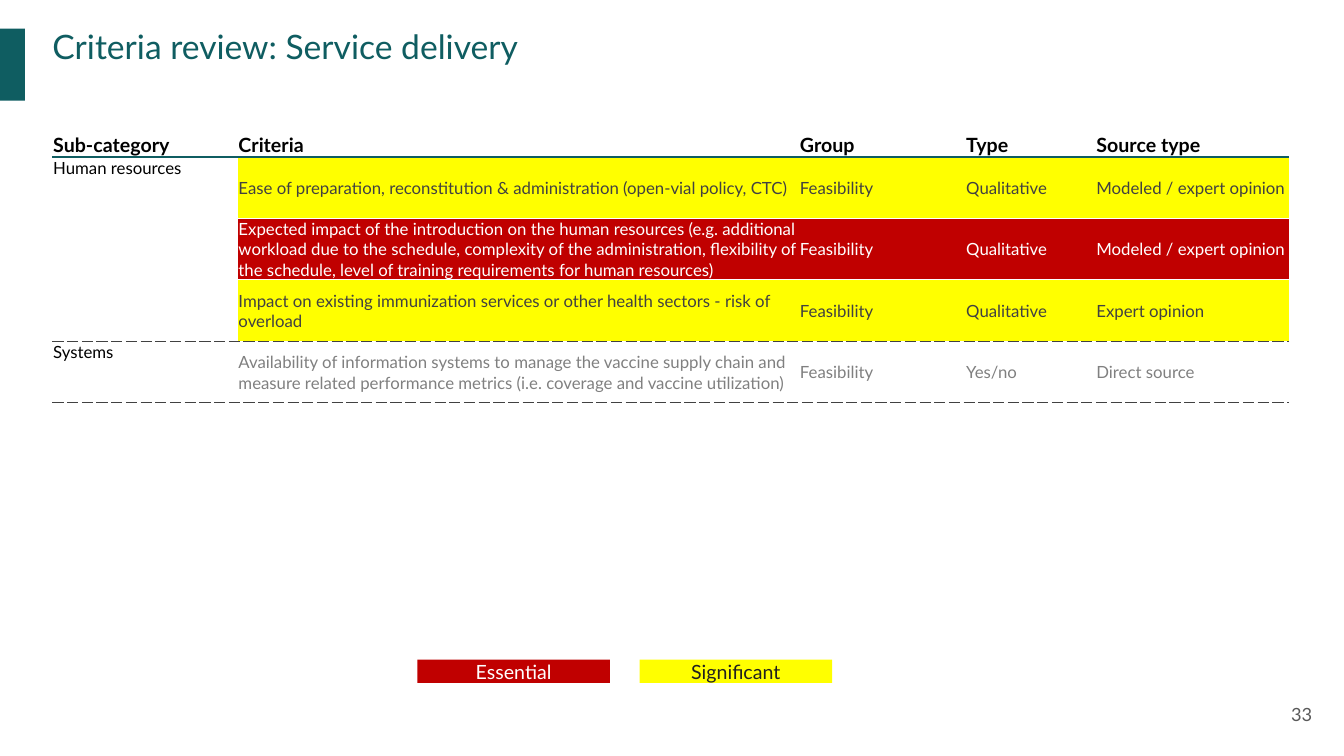
from dataclasses import dataclass

from pptx import Presentation
from pptx import util as u
from pptx.dml.color import RGBColor
from pptx.enum import shapes, text
from pptx.oxml import parse_xml
from pptx.oxml.ns import nsdecls, qn


@dataclass(frozen=True)
class Theme:
    font: str = "Lato"
    teal: str = "0F5D61"
    essential: str = "C00000"
    significant: str = "FFFF00"
    white: str = "FFFFFF"
    black: str = "000000"
    dark: str = "414141"
    muted: str = "808080"
    key_dark: str = "202020"
    page: str = "595959"
    title_size: float = 24
    head_size: float = 14
    body_size: float = 12
    page_size: float = 13
    plain_table: str = "{2D5ABB26-0587-4C30-8999-92F81FD0307C}"


THEME = Theme()
HEAD_RULE = (THEME.teal, 1.5, "solid")
ROW_GAP = (THEME.white, 0.75, "solid")
GROUP_RULE = (THEME.dark, 0.5, "sysDash")

HEADINGS = ["Sub-category", "Criteria", "Group", "Type", "Source type"]
COLUMN_WIDTHS = [4.67, 14.15, 4.19, 3.28, 4.87]
ROW_HEIGHTS = [0.62] + [1.55] * 4
CRITERIA = [
    (["Human resources",
      "Ease of preparation, reconstitution & administration (open-vial policy, CTC)",
      "Feasibility", "Qualitative", "Modeled / expert opinion"],
     THEME.significant, THEME.dark, ROW_GAP),
    (["",
      "Expected impact of the introduction on the human resources (e.g. additional "
      "workload due to the schedule, complexity of the administration, flexibility "
      "of the schedule, level of training requirements for human resources)",
      "Feasibility", "Qualitative", "Modeled / expert opinion"],
     THEME.essential, THEME.white, ROW_GAP),
    (["",
      "Impact on existing immunization services or other health sectors - risk of overload",
      "Feasibility", "Qualitative", "Expert opinion"],
     THEME.significant, THEME.dark, GROUP_RULE),
    (["Systems",
      "Availability of information systems to manage the vaccine supply chain and "
      "measure related performance metrics (i.e. coverage and vaccine utilization)",
      "Feasibility", "Yes/no", "Direct source"],
     THEME.white, THEME.muted, GROUP_RULE),
]


class SlideBuilder:
    def __init__(self, deck, theme):
        self.theme = theme
        self.slide = deck.slides.add_slide(deck.slide_layouts[5])

    def fill_frame(self, frame, words, size, color, align=text.PP_ALIGN.LEFT,
                   anchor=text.MSO_ANCHOR.MIDDLE, insets=(0, 0, 0, 0)):
        frame.text = words
        frame.word_wrap = True
        frame.auto_size = text.MSO_AUTO_SIZE.NONE
        frame.vertical_anchor = anchor
        (frame.margin_left, frame.margin_top,
         frame.margin_right, frame.margin_bottom) = map(u.Cm, insets)
        self.style(frame.paragraphs[0], size, color, align)

    def style(self, paragraph, size, color, align=text.PP_ALIGN.LEFT, bold=False):
        paragraph.alignment = align
        for run in paragraph.runs:
            run.font.name = self.theme.font
            run.font.size = u.Pt(size)
            run.font.bold = bold
            run.font.color.rgb = RGBColor.from_string(color)

    def title(self, words, left, top, width, height):
        heading = self.slide.shapes.title
        heading.left, heading.top = u.Cm(left), u.Cm(top)
        heading.width, heading.height = u.Cm(width), u.Cm(height)
        self.fill_frame(heading.text_frame, words, self.theme.title_size,
                        self.theme.teal, anchor=text.MSO_ANCHOR.TOP)

    def label(self, words, left, top, width, height):
        box = self.slide.shapes.add_textbox(*map(u.Cm, (left, top, width, height)))
        self.fill_frame(box.text_frame, words, self.theme.page_size, self.theme.page,
                        align=text.PP_ALIGN.RIGHT, insets=(0.33,) * 4)

    def block(self, left, top, width, height, fill, words="", color=None):
        bar = self.slide.shapes.add_shape(
            shapes.MSO_SHAPE.RECTANGLE, *map(u.Cm, (left, top, width, height)))
        bar.shadow.inherit = False
        bar.fill.solid()
        bar.fill.fore_color.rgb = RGBColor.from_string(fill)
        bar.line.fill.background()
        if words:
            self.fill_frame(bar.text_frame, words, self.theme.head_size, color,
                            align=text.PP_ALIGN.CENTER)

    def edges(self, cell, top, bottom):
        props = cell._tc.get_or_add_tcPr()
        rules = [(side, rule) for side, rule in (("lnT", top), ("lnB", bottom)) if rule]
        for place, (side, (color, weight, dash)) in enumerate(rules):
            props.insert(place, parse_xml(
                f'<a:{side} {nsdecls("a")} w="{u.Pt(weight)}"><a:solidFill>'
                f'<a:srgbClr val="{color}"/></a:solidFill>'
                f'<a:prstDash val="{dash}"/></a:{side}>'))

    def cell(self, cell, words, size, color, anchor, fill=None, bold=False,
             top=None, bottom=None):
        cell.text_frame.text = words
        cell.vertical_anchor = anchor
        cell.margin_left = cell.margin_right = cell.margin_top = u.Cm(0.02)
        cell.margin_bottom = 0
        self.style(cell.text_frame.paragraphs[0], size, color, bold=bold)
        if fill:
            cell.fill.solid()
            cell.fill.fore_color.rgb = RGBColor.from_string(fill)
        else:
            cell.fill.background()
        self.edges(cell, top, bottom)

    def criteria_table(self, left, top):
        theme, anchors = self.theme, text.MSO_ANCHOR
        grid = self.slide.shapes.add_table(
            len(ROW_HEIGHTS), len(HEADINGS), u.Cm(left), u.Cm(top),
            u.Cm(sum(COLUMN_WIDTHS)), u.Cm(sum(ROW_HEIGHTS))).table
        grid.first_row = grid.horz_banding = False
        grid._tbl.tblPr.find(qn("a:tableStyleId")).text = theme.plain_table
        for column, width in zip(grid.columns, COLUMN_WIDTHS):
            column.width = u.Cm(width)
        for row, height in zip(grid.rows, ROW_HEIGHTS):
            row.height = u.Cm(height)
        grid.cell(1, 0).merge(grid.cell(3, 0))

        for index, heading in enumerate(HEADINGS):
            self.cell(grid.cell(0, index), heading, theme.head_size, theme.black,
                      anchors.MIDDLE if index else anchors.BOTTOM,
                      bold=True, bottom=HEAD_RULE)

        above = HEAD_RULE
        for number, (values, fill, ink, below) in enumerate(CRITERIA, 1):
            subcategory = grid.cell(number, 0)
            if not subcategory.is_spanned:
                self.cell(subcategory, values[0], theme.body_size, theme.black,
                          anchors.TOP, top=above, bottom=GROUP_RULE)
            for index, value in enumerate(values[1:], 1):
                self.cell(grid.cell(number, index), value, theme.body_size, ink,
                          anchors.MIDDLE, fill, top=above, bottom=below)
            above = below


def main():
    deck = Presentation()
    deck.slide_width, deck.slide_height = u.Cm(33.87), u.Cm(19.05)
    page = SlideBuilder(deck, THEME)
    page.block(-0.02, 0.72, 0.65, 1.82, THEME.teal)
    page.title("Criteria review: Service delivery", 1.32, 0.64, 31.88, 2.03)
    page.label("33", 31.37, 17.27, 2.03, 1.45)
    page.criteria_table(1.32, 3.33)
    legend = [("Essential", THEME.essential, THEME.white),
              ("Significant", THEME.significant, THEME.key_dark)]
    for position, (words, fill, ink) in enumerate(legend):
        page.block(10.52 + 5.6 * position, 16.62, 4.85, 0.59, fill, words, ink)
    deck.save("out.pptx")


if __name__ == "__main__":
    main()
